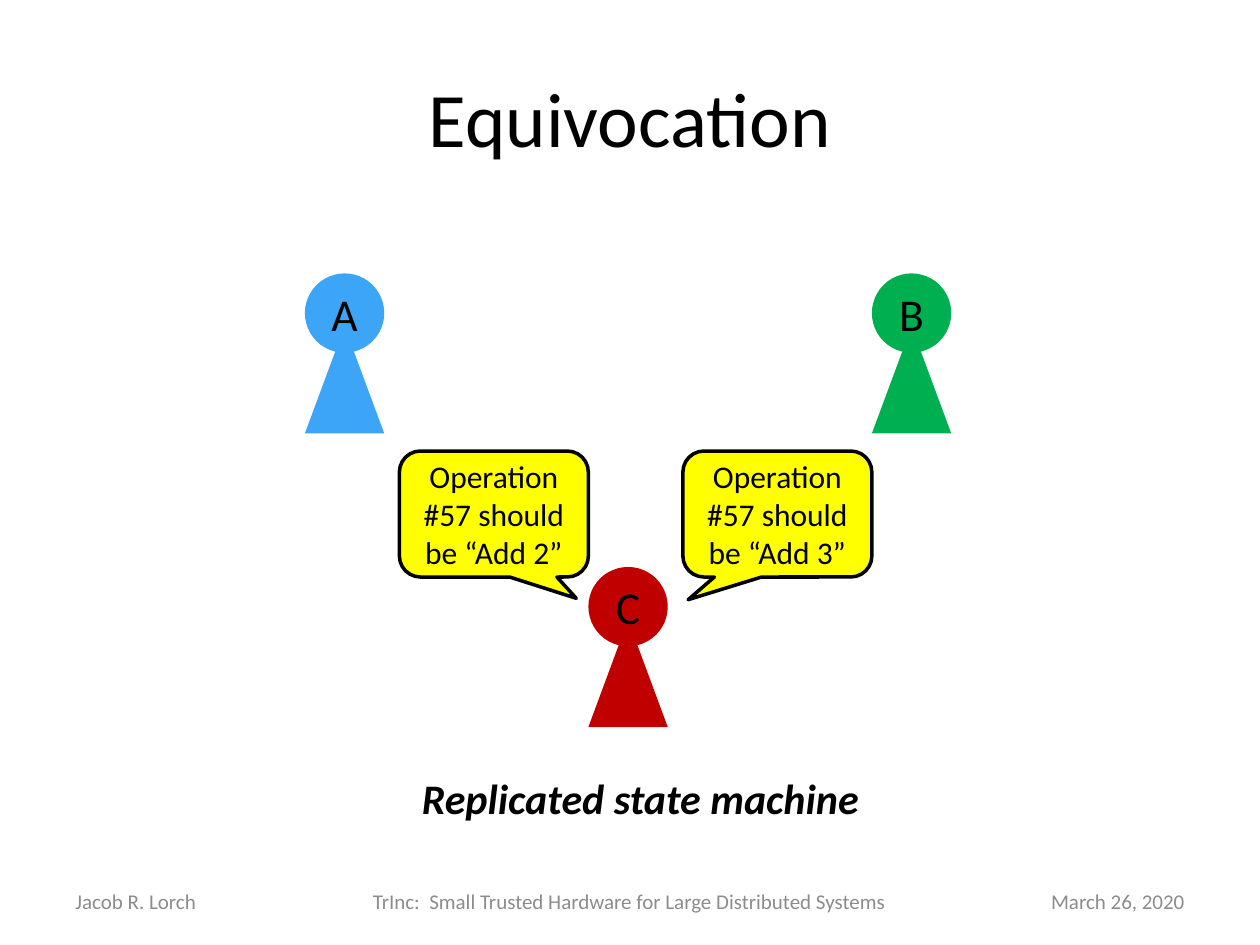
from pptx import Presentation
from pptx.dml.color import RGBColor
from pptx.enum.shapes import MSO_SHAPE as Shape
from pptx.enum.text import MSO_ANCHOR as Anchor, PP_ALIGN as Align
from pptx.util import Inches, Pt

COLORS = {
    "ink": "000000",
    "footer": "8C8C8C",
    "blue": "3CA5F8",
    "red": "C00000",
    "green": "00B050",
    "speech": "FFFF00",
}


def write(holder, words, size, color="ink", align=Align.CENTER, frame_format=None, **font_format):
    frame = holder.text_frame
    frame_values = {"word_wrap": True, "vertical_anchor": Anchor.MIDDLE, **(frame_format or {})}
    for key, value in frame_values.items():
        setattr(frame, key, value)
    paragraph = frame.paragraphs[0]
    paragraph.alignment = align
    run = paragraph.add_run()
    run.text = words
    font_values = {"name": "Calibri", "size": Pt(size), **font_format}
    for key, value in font_values.items():
        setattr(run.font, key, value)
    run.font.color.rgb = RGBColor.from_string(COLORS[color])


def add_filled(parent, kind, box, color):
    part = parent.shapes.add_shape(kind, *map(Inches, box))
    part.shadow.inherit = False
    part.fill.solid()
    part.fill.fore_color.rgb = RGBColor.from_string(COLORS[color])
    part.line.fill.background()
    return part


deck = Presentation()
deck.slide_width, deck.slide_height = Inches(10), Inches(7.5)
slide = deck.slides.add_slide(deck.slide_layouts[6])

title = slide.shapes.add_textbox(*map(Inches, (0.5, 0.3, 9, 1.25)))
write(title, "Equivocation", 44)

no_insets = dict.fromkeys(("margin_left", "margin_top", "margin_right", "margin_bottom"), 0)
head_size = 0.63
for letter, left, top, color in (
    ("A", 2.42, 2.17, "blue"),
    ("C", 4.67, 4.5, "red"),
    ("B", 6.92, 2.17, "green"),
):
    replica = slide.shapes.add_group_shape()
    add_filled(replica, Shape.ISOSCELES_TRIANGLE, (left, top + 0.42, head_size, 0.85), color)
    head = add_filled(replica, Shape.OVAL, (left, top, head_size, head_size), color)
    write(head, letter, 26, frame_format=no_insets)

for operand, left, tip in ((2, 3.17, (0.436, 0.669)), (3, 5.42, (-0.472, 0.68))):
    speech = add_filled(slide, Shape.ROUNDED_RECTANGULAR_CALLOUT, (left, 3.58, 1.5, 1), "speech")
    for index, value in enumerate((*tip, 0.167)):
        speech.adjustments[index] = value
    speech.line.color.rgb = RGBColor.from_string(COLORS["ink"])
    speech.line.width = Pt(2)
    write(speech, f"Operation #57 should be “Add {operand}”", 18)

caption = slide.shapes.add_textbox(*map(Inches, (3.25, 6.08, 3.7, 0.5)))
caption_frame = {"word_wrap": False, "vertical_anchor": Anchor.TOP}
write(caption, "Replicated state machine", 24, align=Align.LEFT,
      frame_format=caption_frame, bold=True, italic=True)

for words, left, width, align in (
    ("Jacob R. Lorch", 0.5, 2.33, Align.LEFT),
    ("TrInc:  Small Trusted Hardware for Large Distributed Systems", 2.83, 4.33, Align.CENTER),
    ("March 26, 2020", 7.17, 2.33, Align.RIGHT),
):
    footer = slide.shapes.add_textbox(*map(Inches, (left, 6.95, width, 0.4)))
    write(footer, words, 12, "footer", align)

deck.save("out.pptx")
